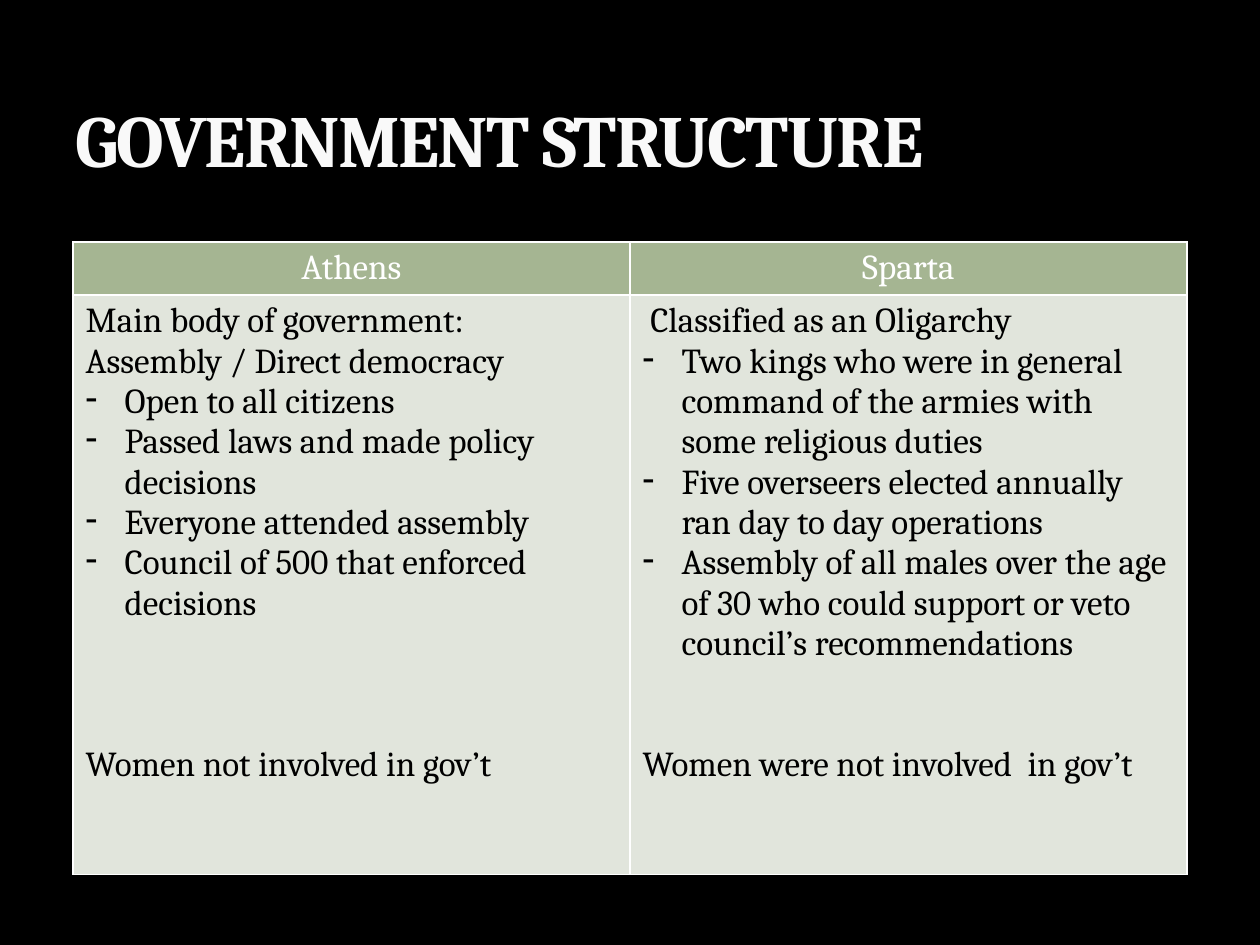
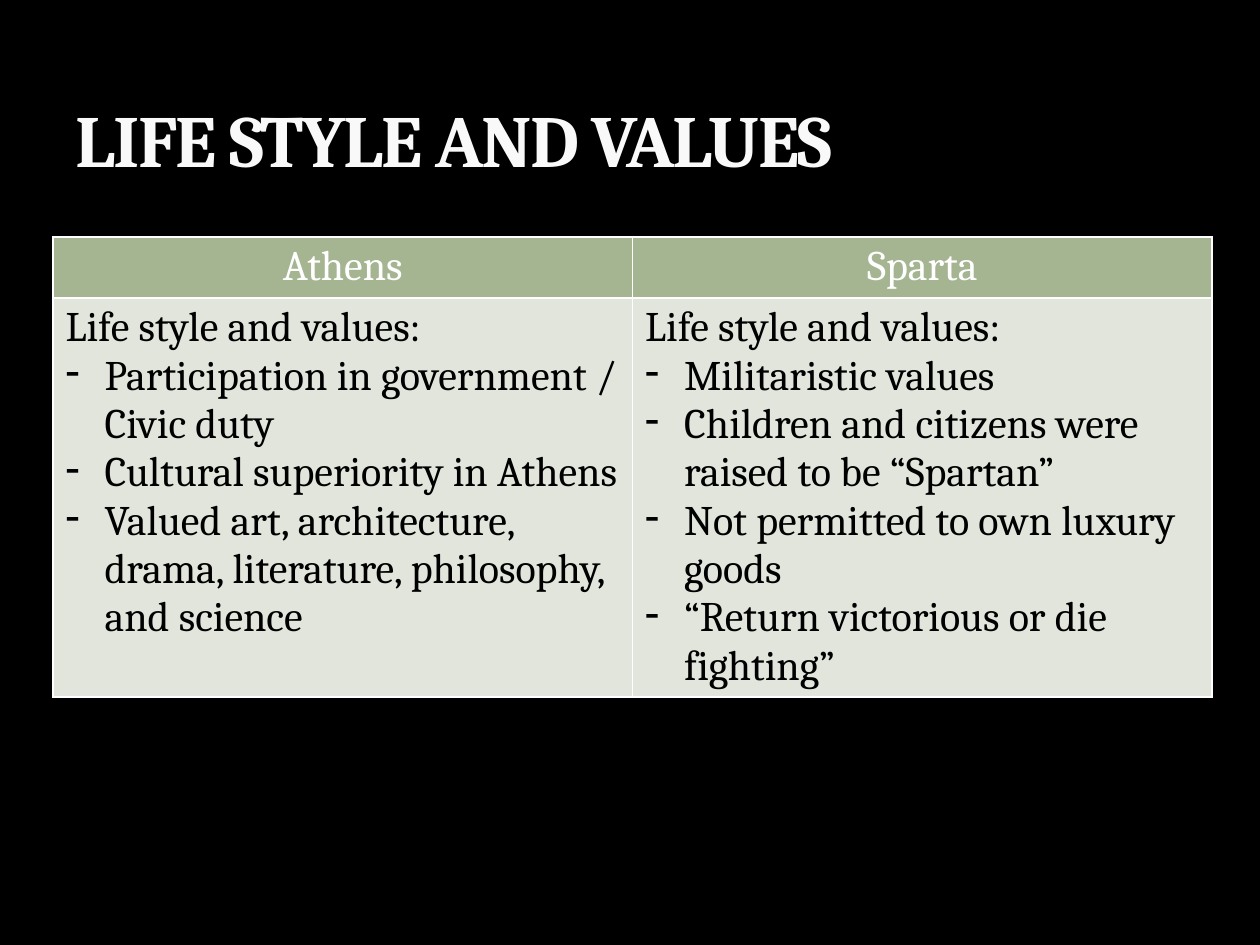
from dataclasses import dataclass

from lxml import etree
from pptx import Presentation
from pptx.dml.color import RGBColor
from pptx.enum.text import MSO_ANCHOR, MSO_AUTO_SIZE, PP_ALIGN
from pptx.oxml.ns import qn
from pptx.slide import Slide
from pptx.util import Inches, Pt

LEFT, CENTER = PP_ALIGN.LEFT, PP_ALIGN.CENTER
BOTTOM = MSO_ANCHOR.BOTTOM
NO_AUTOFIT = MSO_AUTO_SIZE.NONE
TITLE_ONLY = 5


@dataclass(frozen=True)
class Theme:
    font: str = "Cambria"
    background: str = "000000"
    title: str = "F9F9F9"
    title_outline: str = "3C4422"
    header_fill: str = "A5B592"
    header_text: str = "FFFFFF"
    body_fill: str = "E1E5DC"
    body_text: str = "000000"
    border: str = "FFFFFF"
    title_size: int = 42


THEME = Theme()


@dataclass(frozen=True)
class Line:
    text: str
    dashed: bool = False
    space_before: int = 0


@dataclass(frozen=True)
class City:
    name: str
    lines: list[Line]


@dataclass(frozen=True)
class Comparison:
    title: str
    left: float
    top: float
    width: float
    row_heights: tuple[float, float]
    text_size: int
    cities: list[City]


def dashes(*texts: str) -> list[Line]:
    return [Line(text, dashed=True) for text in texts]


COMPARISONS = [
    Comparison(
        "GOVERNMENT STRUCTURE", 0.58, 1.92, 8.84, (0.42, 4.6), 20,
        [
            City("Athens", [
                Line("Main body of government:\vAssembly / Direct democracy"),
                *dashes(
                    "Open to all citizens",
                    "Passed laws and made policy decisions",
                    "Everyone attended assembly",
                    "Council of 500 that enforced decisions",
                ),
                Line("Women not involved in gov’t", space_before=69),
            ]),
            City("Sparta", [
                Line(" Classified as an Oligarchy"),
                *dashes(
                    "Two kings who were in general command of the armies "
                    "with some religious duties",
                    "Five overseers elected annually ran day to day operations",
                    "Assembly of all males over the age of 30 who could "
                    "support or veto council’s recommendations",
                ),
                Line("Women were not involved  in gov’t", space_before=46),
            ]),
        ],
    ),
    Comparison(
        "LIFE STYLE AND VALUES", 0.42, 1.88, 9.2, (0.48, 3.17), 24,
        [
            City("Athens", [
                Line("Life style and values:"),
                *dashes(
                    "Participation in government / Civic duty",
                    "Cultural superiority in Athens",
                    "Valued art, architecture, drama, literature, "
                    "philosophy, and science",
                ),
            ]),
            City("Sparta", [
                Line("Life style and values:"),
                *dashes(
                    "Militaristic values",
                    "Children and citizens were raised to be “Spartan”",
                    "Not permitted to own luxury goods",
                    "“Return victorious or die fighting”",
                ),
            ]),
        ],
    ),
]


def set_all(target, values: dict) -> None:
    for attribute, value in values.items():
        setattr(target, attribute, value)


def write(paragraph, text: str, size: int, color: str,
          align=LEFT, bold: bool = False) -> None:
    paragraph.text = text
    paragraph.alignment = align
    for run in paragraph.runs:
        set_all(run.font, {"name": THEME.font, "size": Pt(size), "bold": bold})
        run.font.color.rgb = RGBColor.from_string(color)


def make_line(tag: str, color: str, points: float, alpha: int = 100):
    line = etree.Element(qn(tag), w=str(Pt(points)))
    fill = etree.SubElement(line, qn("a:solidFill"))
    rgb = etree.SubElement(fill, qn("a:srgbClr"), val=color)
    if alpha < 100:
        etree.SubElement(rgb, qn("a:alpha"), val=str(alpha * 1000))
    return line


def add_dash(paragraph) -> None:
    properties = paragraph._p.get_or_add_pPr()
    indent = Inches(0.31)
    properties.set("marL", str(indent))
    properties.set("indent", str(-indent))
    etree.SubElement(properties, qn("a:buChar"), char="-")


def paint_cell(cell, color: str) -> None:
    cell.fill.solid()
    cell.fill.fore_color.rgb = RGBColor.from_string(color)
    properties = cell._tc.get_or_add_tcPr()
    for position, side in enumerate("LRTB"):
        properties.insert(position, make_line(f"a:ln{side}", THEME.border, 1))


def draw_title(slide: Slide, text: str) -> None:
    title = slide.shapes.title
    set_all(title, {"left": Inches(0.5), "top": Inches(0.17),
                    "width": Inches(9), "height": Inches(1.33)})
    set_all(title.text_frame, {"vertical_anchor": BOTTOM, "word_wrap": True,
                               "auto_size": NO_AUTOFIT})
    heading = title.text_frame.paragraphs[0]
    write(heading, text, THEME.title_size, THEME.title, bold=True)
    properties = heading.runs[0]._r.get_or_add_rPr()
    properties.set("spc", "-100")
    properties.insert(0, make_line("a:ln", THEME.title_outline, 0.25, alpha=25))


def draw_lines(cell, lines: list[Line], size: int) -> None:
    frame = cell.text_frame
    for index, line in enumerate(lines):
        paragraph = frame.add_paragraph() if index else frame.paragraphs[0]
        write(paragraph, line.text, size, THEME.body_text)
        if line.space_before:
            paragraph.space_before = Pt(line.space_before)
        if line.dashed:
            add_dash(paragraph)


def draw_cities(slide: Slide, comparison: Comparison) -> None:
    table = slide.shapes.add_table(
        2, len(comparison.cities), Inches(comparison.left),
        Inches(comparison.top), Inches(comparison.width),
        Inches(sum(comparison.row_heights))).table
    set_all(table, {"first_row": False, "horz_banding": False})
    for row, height in zip(table.rows, comparison.row_heights):
        row.height = Inches(height)
    for column, city in enumerate(comparison.cities):
        header, body = table.cell(0, column), table.cell(1, column)
        paint_cell(header, THEME.header_fill)
        paint_cell(body, THEME.body_fill)
        write(header.text_frame.paragraphs[0], city.name,
              comparison.text_size, THEME.header_text, CENTER)
        draw_lines(body, city.lines, comparison.text_size)


def main() -> None:
    deck = Presentation()
    set_all(deck, {"slide_width": Inches(10), "slide_height": Inches(7.5)})
    backdrop = deck.slide_master.background.fill
    backdrop.solid()
    backdrop.fore_color.rgb = RGBColor.from_string(THEME.background)
    for comparison in COMPARISONS:
        slide = deck.slides.add_slide(deck.slide_layouts[TITLE_ONLY])
        draw_title(slide, comparison.title)
        draw_cities(slide, comparison)
    deck.save("out.pptx")


if __name__ == "__main__":
    main()
